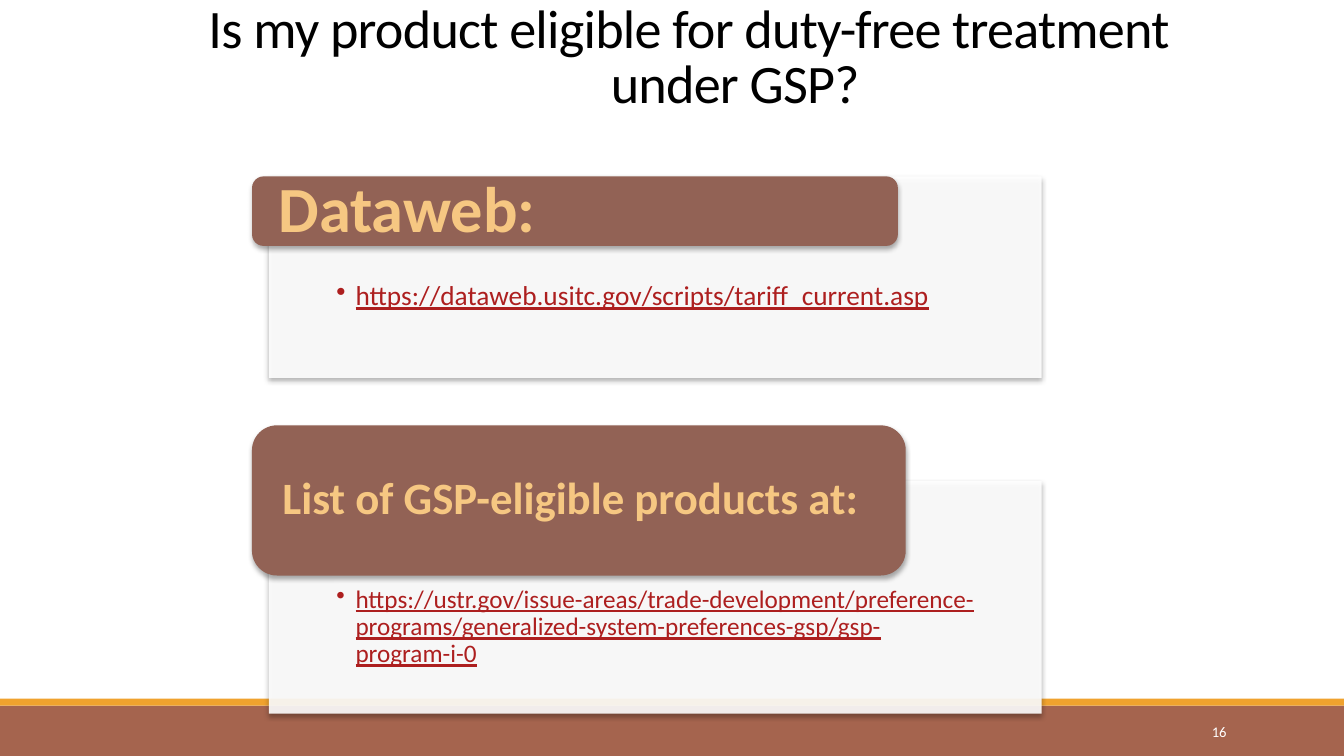
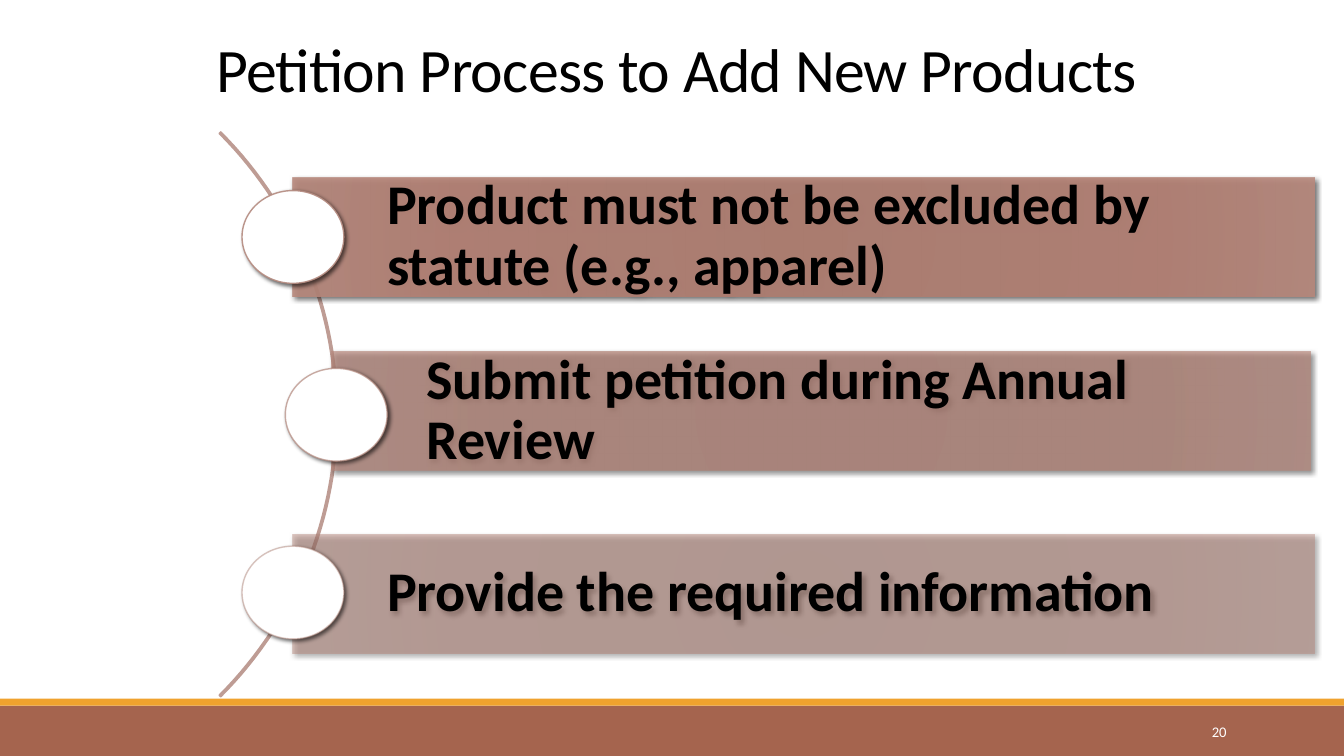
from dataclasses import dataclass
from math import cos, pi, sin, sqrt

from lxml import etree
from pptx import Presentation
from pptx.dml.color import RGBColor
from pptx.enum.shapes import MSO_SHAPE as Preset
from pptx.enum.text import MSO_ANCHOR as Anchor, MSO_AUTO_SIZE as AutoSize, PP_ALIGN as Align
from pptx.oxml import parse_xml
from pptx.oxml.ns import nsdecls, qn
from pptx.util import Inches, Pt

FONT = "Calibri"
BLACK, WHITE = "000000", "FFFFFF"
BAND, STRIPE = "A5644E", "F0A22E"
HEADER, HEADER_TEXT, LINK = "926255", "F6C782", "AD1F1F"
ARC_LINE, CIRCLE_LINE = "BE9C94", "B58B80"
BAR_STOPS = [(0, "B07D70"), (34, "B17F72"), (70, "B48073"), (100, "B8897D")]
TITLE_ONLY = 5


@dataclass
class Box:
    left: float
    top: float
    width: float
    height: float

    def inner(self, left, top, width, height):
        """Return an inner box, given in percent of this one."""
        return Box(self.left + self.width * left / 100, self.top + self.height * top / 100,
                   self.width * width / 100, self.height * height / 100)

    def emu(self):
        return [Inches(value) for value in (self.left, self.top, self.width, self.height)]


SLIDE = Box(0, 0, 13.333, 7.5)


def rgb(color):
    return RGBColor.from_string(color)


def set_alpha(color_parent, percent):
    color = next(color_parent.iter(qn("a:srgbClr")))
    etree.SubElement(color, qn("a:alpha")).set("val", str(percent * 1000))


def add_shadow(shape, opacity, blur, distance, angle):
    effects = shape.element.spPr.find(qn("a:effectLst"))
    effects.append(parse_xml(
        f'<a:outerShdw {nsdecls("a")} blurRad="{Pt(blur)}" dist="{Pt(distance)}" '
        f'dir="{angle * 60000}" algn="ctr" rotWithShape="0"><a:srgbClr val="{BLACK}">'
        f'<a:alpha val="{opacity * 1000}"/></a:srgbClr></a:outerShdw>'))


def add_preset(slide, preset, box, fill, opacity=100):
    shape = slide.shapes.add_shape(preset, *box.emu())
    shape.shadow.inherit = False
    shape.fill.solid()
    shape.fill.fore_color.rgb = rgb(fill)
    shape.line.fill.background()
    if opacity < 100:
        set_alpha(shape.element.spPr.find(qn("a:solidFill")), opacity)
    return shape


def fill_radial(shape, opacity):
    stops = "".join(
        f'<a:gs pos="{position * 1000}"><a:srgbClr val="{color}">'
        f'<a:alpha val="{opacity * 1000}"/></a:srgbClr></a:gs>' for position, color in BAR_STOPS)
    gradient = parse_xml(
        f'<a:gradFill {nsdecls("a")} rotWithShape="1"><a:gsLst>{stops}</a:gsLst>'
        '<a:path path="circle"><a:fillToRect l="100000" t="100000" r="100000" b="100000"/>'
        '</a:path></a:gradFill>')
    properties = shape.element.spPr
    properties.replace(properties.find(qn("a:solidFill")), gradient)


def write(shape, text, size, color, bold=None, underline=None, align=Align.LEFT,
          anchor=Anchor.MIDDLE, insets=(0.1, 0.05, 0.1, 0.05), spacing=0.9):
    """Fill the shape with one paragraph and return that paragraph."""
    frame = shape.text_frame
    frame.word_wrap = True
    frame.auto_size = AutoSize.NONE
    frame.vertical_anchor = anchor
    (frame.margin_left, frame.margin_top,
     frame.margin_right, frame.margin_bottom) = [Inches(inset) for inset in insets]
    paragraph = frame.paragraphs[0]
    paragraph.alignment = align
    paragraph.line_spacing = spacing
    run = paragraph.add_run()
    run.text = text
    font = run.font
    font.name, font.size, font.bold, font.underline = FONT, Pt(size), bold, underline
    font.color.rgb = rgb(color)
    return paragraph


def set_indent(paragraph, inches):
    """Hang the first line by the given length."""
    properties = paragraph._p.get_or_add_pPr()
    properties.set("marL", str(Inches(inches)))
    properties.set("indent", str(-Inches(inches)))
    return properties


def add_bands(slide):
    """Draw the foot bands and move them to the master."""
    tree = slide.slide_layout.slide_master.shapes.element
    bands = [(SLIDE.inner(0, 93.33, 100, 6.67), BAND), (SLIDE.inner(0, 92.4, 100, 0.93), STRIPE)]
    for index, (box, color) in enumerate(bands):
        tree.insert(2 + index, add_preset(slide, Preset.RECTANGLE, box, color).element)


def add_titled_slide(presentation, title, size, box, number, hang=0, bottom=0.05):
    slide = presentation.slides.add_slide(presentation.slide_layouts[TITLE_ONLY])
    placeholder = slide.shapes.title
    placeholder.left, placeholder.top, placeholder.width, placeholder.height = box.emu()
    paragraph = write(placeholder, title, size, BLACK, align=Align.CENTER, anchor=Anchor.BOTTOM,
                      insets=(0.1, 0.05, 0.1, bottom), spacing=0.85)
    paragraph.runs[0]._r.get_or_add_rPr().set("spc", "-50")
    set_indent(paragraph, hang)
    number_box = slide.shapes.add_textbox(*SLIDE.inner(81.25, 94.13, 10.75, 5.33).emu())
    write(number_box, number, 10.5, WHITE, align=Align.RIGHT, spacing=1.0)
    return slide


def add_link_card(slide, box, heading, heading_size, header_share, panel_top, link, link_size):
    """Place a link panel with a rounded header over its upper left corner."""
    panel = add_preset(slide, Preset.RECTANGLE,
                       box.inner(2.13, panel_top, 97.87, 100 - panel_top), WHITE, 90)
    paragraph = write(panel, link, link_size, LINK, underline=True, anchor=Anchor.TOP,
                      insets=(0.67, 1.05, 0.67, 0.15))
    bullet = etree.SubElement(set_indent(paragraph, 0.19), qn("a:buChar"))
    bullet.set("char", "•")
    header = add_preset(slide, Preset.ROUNDED_RECTANGLE, box.inner(0, 0, *header_share), HEADER)
    write(header, heading, heading_size, HEADER_TEXT, bold=True, insets=(0.23, 0, 0.23, 0))
    for shape in (panel, header):
        add_shadow(shape, 32, 3.5, 2.2, 90)


def add_arc(slide, box, thickness=0.02, steps=60):
    """Draw a thin quarter ring that bulges right from the left edge of the box."""
    center_x, center_y = box.left - box.height / 2, box.top + box.height / 2
    outer = box.height / sqrt(2)
    angles = [pi / 2 * step / steps - pi / 4 for step in range(steps + 1)]
    rim = [(outer, angle) for angle in angles]
    rim += [(outer - thickness, angle) for angle in reversed(angles)]
    points = [(Inches(center_x + radius * cos(angle)), Inches(center_y + radius * sin(angle)))
              for radius, angle in rim]
    builder = slide.shapes.build_freeform(*points[0])
    builder.add_line_segments(points[1:], close=True)
    arc = builder.convert_to_shape()
    arc.shadow.inherit = False
    arc.fill.background()
    arc.line.color.rgb = rgb(ARC_LINE)
    arc.line.width = Pt(1.25)


def add_step(slide, bar_box, circle_box, text, opacity):
    bar = add_preset(slide, Preset.RECTANGLE, bar_box, BAR_STOPS[0][1])
    fill_radial(bar, opacity)
    add_shadow(bar, 60, 3.5, 2, 45)
    write(bar, text, 40, BLACK, bold=True, insets=(0.94, 0.11, 0.11, 0.11))
    circle = add_preset(slide, Preset.OVAL, circle_box, WHITE)
    circle.line.color.rgb = rgb(CIRCLE_LINE)
    circle.line.width = Pt(1)
    set_alpha(circle.element.spPr.find(qn("a:ln")), opacity)
    add_shadow(circle, 60, 3, 2, 45)


def add_step_list(slide, box, steps):
    add_arc(slide, box)
    for index, (text, bar_left, bar_top, bar_width, circle_left) in enumerate(steps):
        add_step(slide, box.inner(bar_left, bar_top, bar_width, 21.07),
                 box.inner(circle_left, 10.36 + 31.5 * index, 9.31, 16.43),
                 text, 90 - 20 * index)


def main():
    presentation = Presentation()
    presentation.slide_width, presentation.slide_height = SLIDE.emu()[2:]

    eligibility = add_titled_slide(
        presentation, "Is my product eligible for duty-free treatment under GSP?", 38.7,
        SLIDE.inner(13.75, -0.67, 75, 24), "16", hang=0.92, bottom=0.61)
    add_bands(eligibility)
    add_link_card(eligibility, SLIDE.inner(18.75, 23.33, 58.75, 26.67), "Dataweb:", 46,
                  (81.8, 34.5), 0, "https://dataweb.usitc.gov/scripts/tariff_current.asp", 19.5)
    add_link_card(eligibility, SLIDE.inner(18.75, 56.27, 58.75, 38.13),
                  "List of GSP-eligible products at:", 32, (82.8, 52.1), 19.23,
                  "https://ustr.gov/issue-areas/trade-development/preference-programs/"
                  "generalized-system-preferences-gsp/gsp-program-i-0", 18)

    petition = add_titled_slide(presentation, "Petition Process to Add New Products", 44.1,
                                SLIDE.inner(14.48, 0, 71.7, 14.53), "20")
    add_step_list(petition, SLIDE.inner(16.43, 17.47, 81.37, 74.67), [
        ("Product must not be excluded by statute (e.g., apparel)", 6.54, 8.04, 93.46, 1.94),
        ("Submit petition during Annual Review", 10.14, 38.93, 89.5, 5.9),
        ("Provide the required information", 6.54, 71.25, 93.46, 1.94),
    ])
    presentation.save("out.pptx")


if __name__ == "__main__":
    main()
